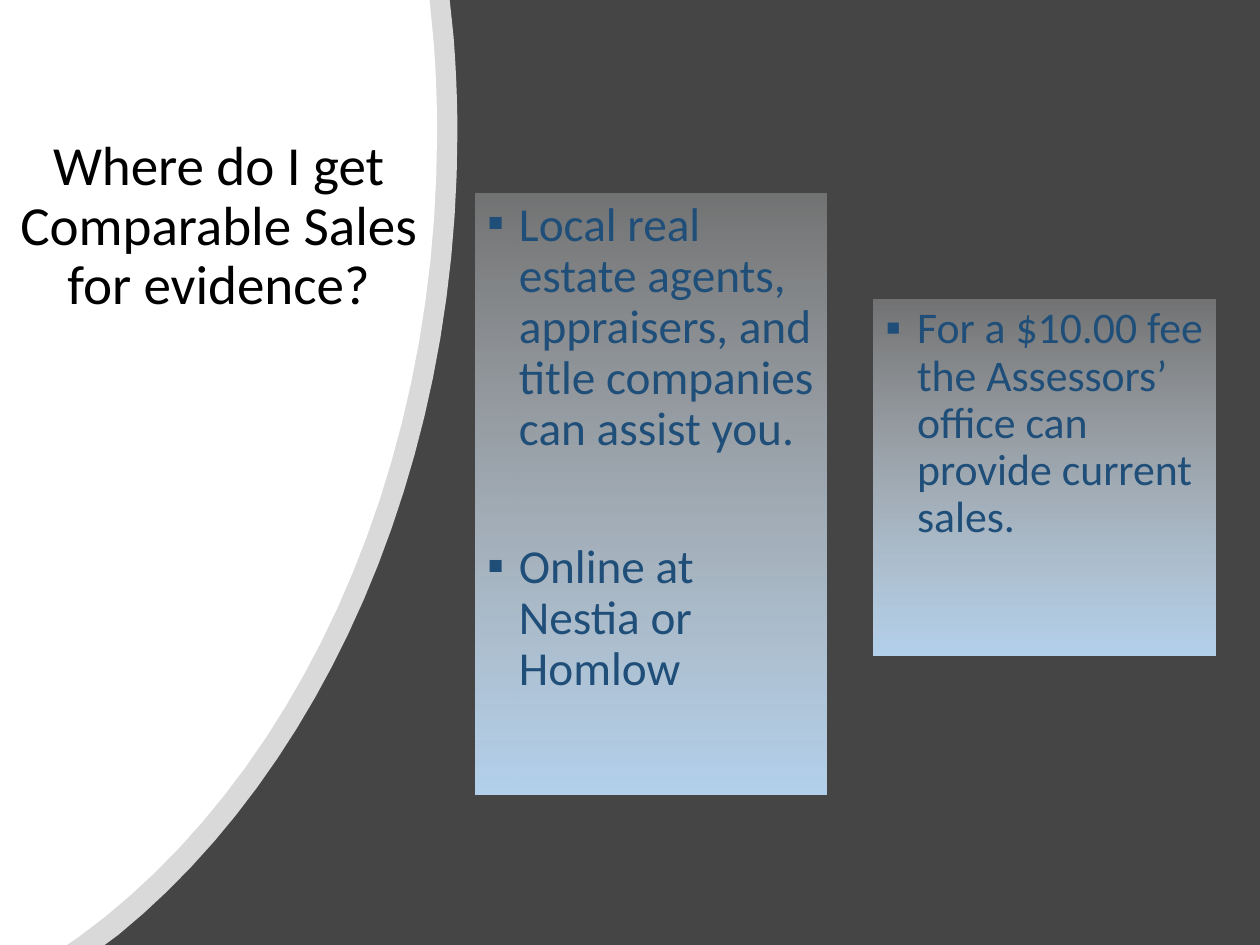
from dataclasses import dataclass

from lxml import etree
from pptx import Presentation
from pptx import util as u
from pptx.dml.color import RGBColor
from pptx.enum import shapes, text
from pptx.oxml.ns import qn

DARK_GREY = RGBColor(0x45, 0x45, 0x45)
WHITE = RGBColor(0xFF, 0xFF, 0xFF)
BLACK = RGBColor(0, 0, 0)
NAVY = RGBColor(0x1F, 0x4E, 0x79)
PALE_BLUE = RGBColor(0xF7, 0xFA, 0xFD)
LIGHT_BLUE = RGBColor(0xB5, 0xD2, 0xEC)
FONT = "Calibri"
SLIDE_HEIGHT = 540
CURVE_STEPS = 24

Point = tuple[float, float]


@dataclass
class Arc:
    """A white panel whose right edge is two joined Bezier curves."""
    top_x: float
    curves: list[list[Point]]
    bottom_x: float
    opacity: int


@dataclass
class Card:
    left: float
    top: float
    width: float
    height: float
    size: float
    space_between: float
    bullets: list[str]


ARCS = [
    Arc(257, [[(259.2, 20.9), (260.6, 38.9), (261.4, 57.6), (261.4, 75.6)],
              [(261.4, 75.6), (261.4, 270), (183.6, 439.9), (67.7, 534.2)]], 59.8, 80),
    Arc(245.5, [[(247.7, 22.3), (249.1, 39.6), (249.8, 57.6), (249.8, 75.6)],
                [(249.8, 75.6), (249.8, 274.3), (167, 447.1), (44.6, 535.7)]], 38.2, 100),
]
CARDS = [
    Card(271.44, 110.9, 200.9, 343.4, 27, 49.5,
         ["Local real estate agents, appraisers, and title companies can assist you.",
          "Online at Nestia or Homlow"]),
    Card(499, 171.4, 195.8, 203, 25, 10,
         ["For a $10.00 fee the Assessors’ office can provide current sales."]),
]


def set_opacity(shape, percent: int) -> None:
    """Apply opacity to the first colour of a shape's fill."""
    color = next(shape._element.spPr.iter(qn("a:srgbClr")))
    etree.SubElement(color, qn("a:alpha"), val=str(percent * 1000))


def bezier(points: list[Point]) -> list[Point]:
    def at(t: float) -> Point:
        weights = ((1 - t) ** 3, 3 * t * (1 - t) ** 2, 3 * t * t * (1 - t), t ** 3)
        return (sum(w * p[0] for w, p in zip(weights, points)),
                sum(w * p[1] for w, p in zip(weights, points)))
    return [at(step / CURVE_STEPS) for step in range(CURVE_STEPS + 1)]


def draw_arc(slide, arc: Arc) -> None:
    outline = [(arc.top_x, 0)]
    for curve in arc.curves:
        outline += bezier(curve)
    outline += [(arc.bottom_x, SLIDE_HEIGHT), (0, SLIDE_HEIGHT)]
    builder = slide.shapes.build_freeform(0, 0)
    builder.add_line_segments([(u.Pt(x), u.Pt(y)) for x, y in outline], close=True)
    shape = builder.convert_to_shape()
    shape.shadow.inherit = False
    shape.line.fill.background()
    shape.fill.solid()
    shape.fill.fore_color.rgb = WHITE
    if arc.opacity < 100:
        set_opacity(shape, arc.opacity)


def add_run(paragraph, words: str, size: float, color: RGBColor) -> None:
    run = paragraph.add_run()
    run.text = words
    run.font.name = FONT
    run.font.size = u.Pt(size)
    run.font.color.rgb = color


def add_bullet(paragraph) -> None:
    properties = paragraph._p.get_or_add_pPr()
    properties.set("marL", str(u.Pt(18)))
    properties.set("indent", str(-u.Pt(18)))
    etree.SubElement(properties, qn("a:buFont"), typeface="Wingdings")
    properties[-1].set("typeface", FONT)
    etree.SubElement(properties, qn("a:buChar"), char="▪")


def draw_card(slide, card: Card) -> None:
    shape = slide.shapes.add_shape(
        shapes.MSO_SHAPE.RECTANGLE, u.Pt(card.left), u.Pt(card.top),
        u.Pt(card.width), u.Pt(card.height))
    shape.shadow.inherit = False
    shape.line.fill.background()
    shape.fill.gradient()
    shape.fill.gradient_angle = 270
    for stop, color in zip(shape.fill.gradient_stops, (PALE_BLUE, LIGHT_BLUE)):
        stop.color.rgb = color
    set_opacity(shape, 25)

    frame = shape.text_frame
    frame.word_wrap = True
    frame.vertical_anchor = text.MSO_ANCHOR.TOP
    for index, words in enumerate(card.bullets):
        paragraph = frame.add_paragraph() if index else frame.paragraphs[0]
        add_bullet(paragraph)
        paragraph.alignment = text.PP_ALIGN.LEFT
        paragraph.line_spacing = 0.9
        if index:
            paragraph.space_before = u.Pt(card.space_between)
        add_run(paragraph, words, card.size, NAVY)


def draw_title(slide) -> None:
    title = slide.shapes.title
    title.left, title.top = u.Pt(-10.8), u.Pt(59)
    title.width, title.height = u.Pt(271.4), u.Pt(224)
    frame = title.text_frame
    frame.word_wrap = True
    frame.auto_size = text.MSO_AUTO_SIZE.NONE
    frame.vertical_anchor = text.MSO_ANCHOR.TOP
    frame.margin_top = u.Pt(20)
    paragraph = frame.paragraphs[0]
    paragraph.alignment = text.PP_ALIGN.CENTER
    paragraph.line_spacing = 0.9
    add_run(paragraph, "Where do I get Comparable Sales for evidence?", 31.5, BLACK)


def main() -> None:
    presentation = Presentation()
    presentation.slide_width = u.Pt(720)
    presentation.slide_height = u.Pt(SLIDE_HEIGHT)
    slide = presentation.slides.add_slide(presentation.slide_layouts[5])
    slide.background.fill.solid()
    slide.background.fill.fore_color.rgb = DARK_GREY

    # Curved white panel with its translucent rim
    for arc in ARCS:
        draw_arc(slide, arc)

    # Title, raised above the panel
    draw_title(slide)
    slide.shapes._spTree.append(slide.shapes.title._element)

    # Gradient cards
    for card in CARDS:
        draw_card(slide, card)

    presentation.save("out.pptx")


if __name__ == "__main__":
    main()
